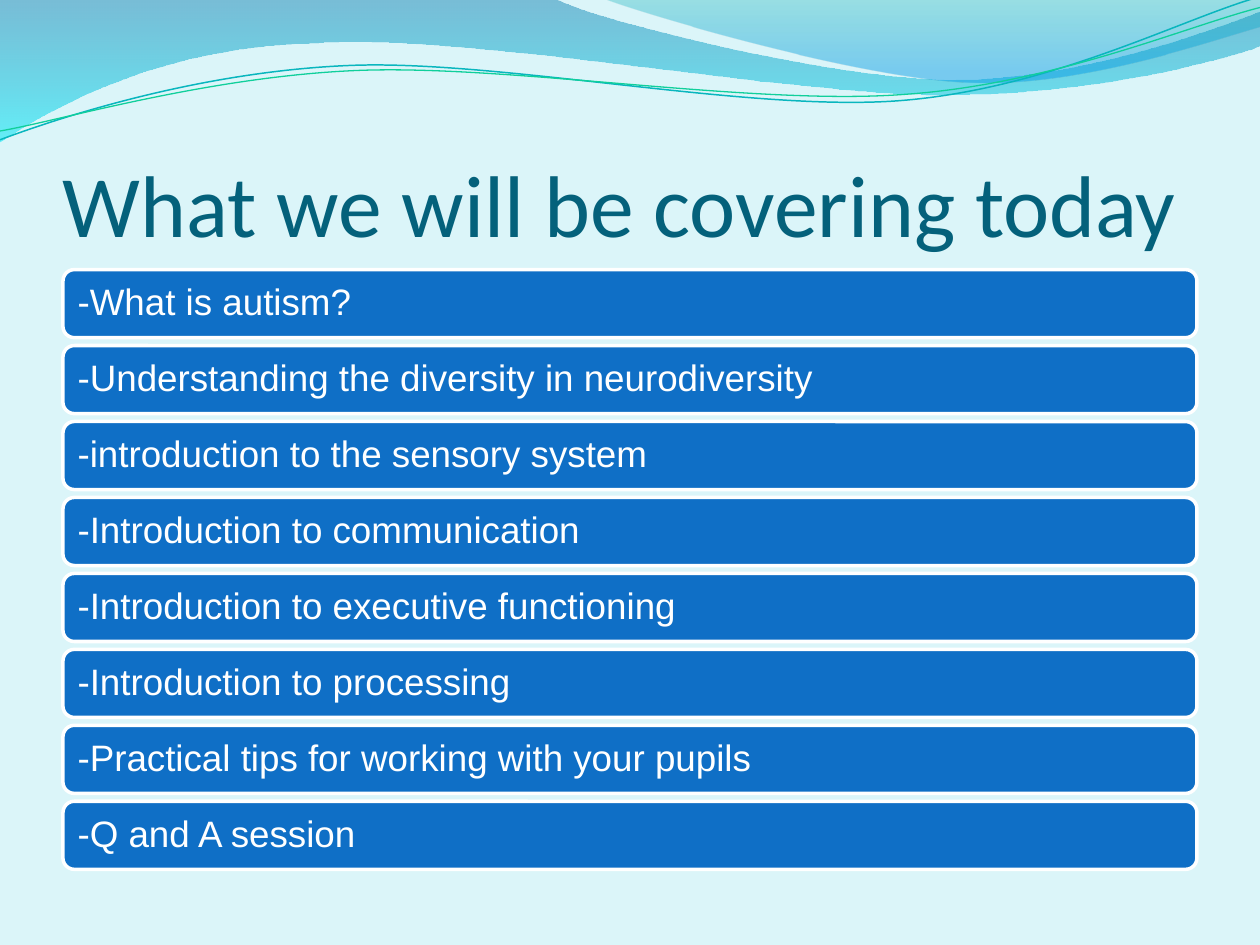
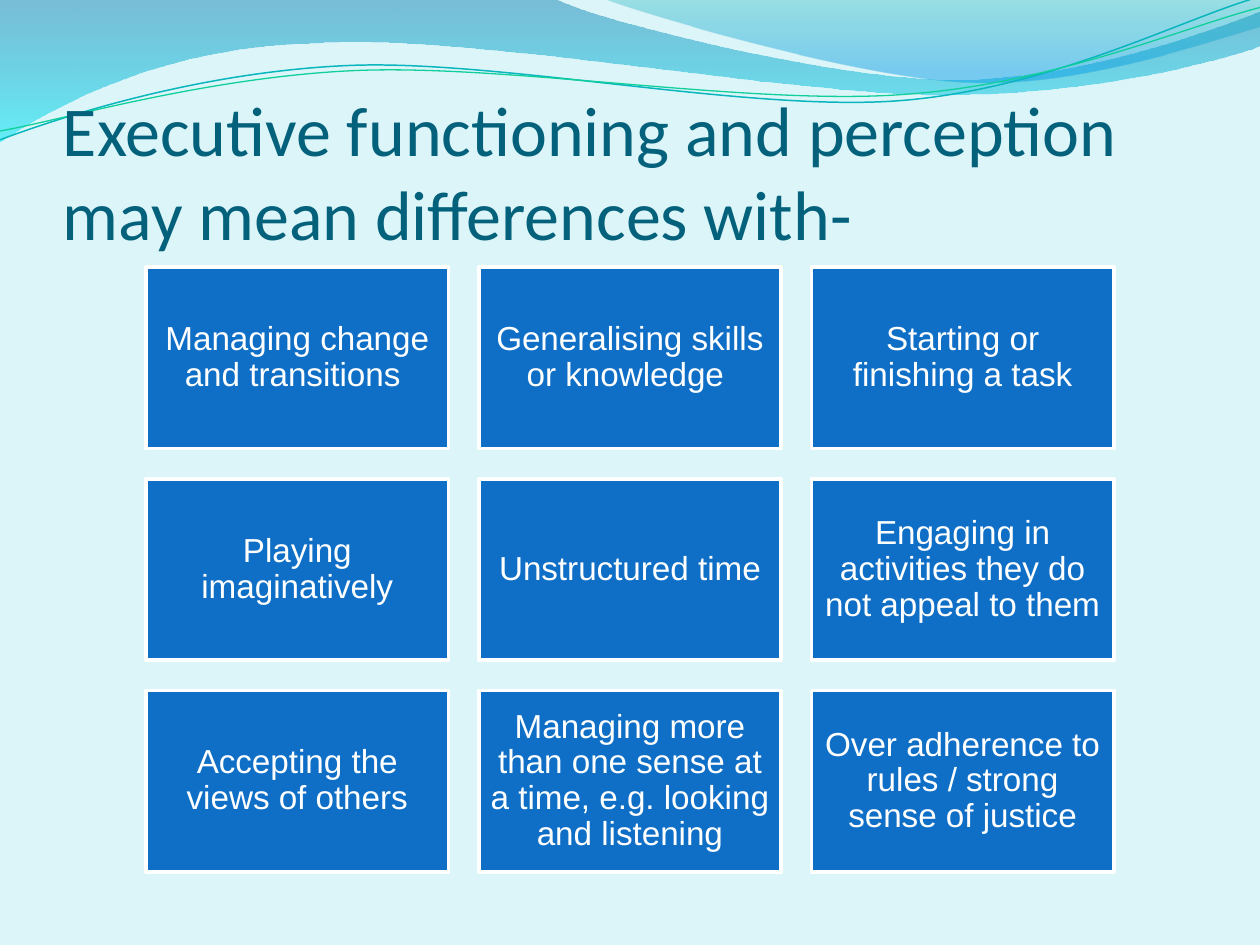
from math import cos, radians, sin

from lxml.etree import SubElement as Sub
from pptx import Presentation
from pptx.dml.color import RGBColor as RGB
from pptx.enum.shapes import MSO_SHAPE as Kind
from pptx.enum.text import MSO_ANCHOR as Anchor, PP_ALIGN as Align
from pptx.oxml.ns import qn
from pptx.util import Inches, Pt

SKY = RGB(0xDB, 0xF5, 0xF9)
INK = RGB(0x04, 0x61, 0x7B)
BLUE = RGB(0x0F, 0x6F, 0xC6)
WHITE = RGB(0xFF, 0xFF, 0xFF)
DEEP = RGB(0x00, 0x79, 0xAD)
CYAN = RGB(0x00, 0xE9, 0xF7)
TEAL = RGB(0x00, 0xAB, 0xB4)
AZURE = RGB(0x00, 0x99, 0xE4)
AQUA = RGB(0x09, 0xB6, 0xBE)
GREEN = RGB(0x10, 0xCF, 0x9B)

TILT = -2.7  # degrees, for the two thin curves

# A path is a start point, then parts: one point is a line, three a curve.
WAVE = [(0, 0), [(4.4, -0.01)],
        [(4.76, 0.17), (6.64, 0.63), (7.58, 0.63)],
        [(8.53, 0.63), (9.58, 0.26), (10, 0.09)], [(10.01, 0.36)],
        [(9.83, 0.44), (8.7, 0.76), (7.46, 0.75)],
        [(6.22, 0.75), (3.82, 0.28), (2.57, 0.34)],
        [(1.29, 0.36), (0.46, 0.83), (-0.01, 1.13)], [(0, 0)]]
CREST = [(4.79, -0.01), [(5.09, 0.11), (6.82, 0.62), (7.69, 0.65)],
         [(8.56, 0.69), (9.61, 0.32), (10, 0.21)], [(10, 0)],
         [(4.79, -0.01)]]
LOW = [(0, 1.11), [(0.48, 0.93), (1.58, 0.57), (2.77, 0.52)],
       [(3.95, 0.47), (5.93, 0.89), (7.13, 0.8)],
       [(8.33, 0.71), (9.38, 0.15), (9.98, -0.02)]]
HIGH = [(0, 1.04), [(0.47, 0.96), (1.64, 0.61), (2.83, 0.56)],
        [(4.03, 0.51), (5.97, 0.84), (7.17, 0.75)],
        [(8.36, 0.67), (9.41, 0.21), (10, 0.06)]]

TOPICS = [
    "-What is autism?",
    "-Understanding the diversity in neurodiversity",
    "-introduction to the sensory system",
    "-Introduction to communication",
    "-Introduction to executive functioning",
    "-Introduction to processing",
    "-Practical tips for working with your pupils",
    "-Q and A session",
]
# A closing space counts in the centring of its line.
TRAITS = [
    "Managing change and transitions ",
    "Generalising skills or knowledge ",
    "Starting or finishing a task",
    "Playing imaginatively",
    "Unstructured time",
    "Engaging in activities they do not appeal to them",
    "Accepting the views of others",
    "Managing more than one sense at a time, e.g. looking and listening",
    "Over adherence to rules / strong sense of justice",
]


def turn(point, angle):
    """Turn a point clockwise about the slide's top left corner."""
    x, y = point
    c, s = cos(radians(angle)), sin(radians(angle))
    return x * c - y * s, x * s + y * c


def add_path(slide, path, close, tilt=0):
    """Draw a path with true curves, in a box tilted by an angle."""
    start, *parts = path
    dots = [turn(dot, -tilt) for dot in [start, *sum(parts, [])]]
    dots = [(Inches(x), Inches(y)) for x, y in dots]
    pen = slide.shapes.build_freeform(*dots[0])
    pen.add_line_segments(dots[1:], close=close)
    shape = pen.convert_to_shape()
    shape.shadow.inherit = False

    lines = iter(list(shape._element.iter(qn("a:lnTo"))))
    for part in parts:
        group = [next(lines) for _ in part]
        if len(part) == 3:
            curve = group[0].makeelement(qn("a:cubicBezTo"))
            group[0].addprevious(curve)
            for line in group:
                curve.append(line[0])
                line.getparent().remove(line)

    half_w, half_h = shape.width / 2, shape.height / 2
    x, y = turn((shape.left + half_w, shape.top + half_h), tilt)
    shape.left, shape.top = round(x - half_w), round(y - half_h)
    shape.rotation = tilt
    return shape


def add_wave(slide, path, stops):
    """Draw a see-through wave; a stop is place, colour, opacity in percent."""
    shape = add_path(slide, path, True)
    shape.line.fill.background()
    shape.fill.gradient()
    shape.fill.gradient_angle = 270
    for stop, (place, color, _) in zip(shape.fill.gradient_stops, stops):
        stop.position = place
        stop.color.rgb = color
    for node, (_, _, alpha) in zip(shape._element.iter(qn("a:srgbClr")), stops):
        Sub(node, qn("a:alpha"), val=str(alpha * 1000))
    return shape


def add_curve(slide, path, color, width):
    shape = add_path(slide, path, False, TILT)
    shape.fill.background()
    shape.line.color.rgb = color
    shape.line.width = Pt(width)
    return shape


def dress_master(deck, slide):
    """Colour the master and move the waves, drawn on a slide, to it."""
    master = deck.slide_master
    back = master.background.fill
    back.solid()
    back.fore_color.rgb = SKY
    waves = [
        add_wave(slide, WAVE, [(0, DEEP, 45), (1, CYAN, 55)]),
        add_wave(slide, CREST, [(0, TEAL, 30), (0.8, AZURE, 45)]),
        add_curve(slide, LOW, AQUA, 0.85),
        add_curve(slide, HIGH, GREEN, 0.75),
    ]
    for number, wave in enumerate(waves, 20):
        wave._element.nvSpPr.cNvPr.set("id", str(number))
        master.shapes._spTree.append(wave._element)


def write(frame, text, size, font, color, align, anchor):
    frame.word_wrap = True
    frame.vertical_anchor = anchor
    para = frame.paragraphs[0]
    para.text = text
    para.alignment = align
    para.font.size = Pt(size)
    para.font.name = font
    para.font.color.rgb = color
    return para


def set_inset(frame, left, top, right, bottom):
    frame.margin_left, frame.margin_top = Inches(left), Inches(top)
    frame.margin_right, frame.margin_bottom = Inches(right), Inches(bottom)


def add_slide(deck):
    return deck.slides.add_slide(deck.slide_layouts[6])


def add_title(slide, text, size):
    box = slide.shapes.add_textbox(
        Inches(0.5), Inches(0.77), Inches(9), Inches(1.25))
    set_inset(box.text_frame, 0, 0.05, 0, 0)
    write(box.text_frame, text, size, "Calibri", INK, Align.LEFT,
          Anchor.BOTTOM)


def add_card(slide, kind, spot, text, size, align, inset):
    shape = slide.shapes.add_shape(kind, *map(Inches, spot))
    shape.shadow.inherit = False
    shape.fill.solid()
    shape.fill.fore_color.rgb = BLUE
    shape.line.color.rgb = WHITE
    shape.line.width = Pt(2)
    set_inset(shape.text_frame, *[inset] * 4)
    para = write(shape.text_frame, text, size, "Arial", WHITE, align,
                 Anchor.MIDDLE)
    para.line_spacing = 0.9


def add_list(slide, items):
    first, last = 2.14, 6.36
    step = (last - first) / (len(items) - 1)
    for n, text in enumerate(items):
        add_card(slide, Kind.ROUNDED_RECTANGLE,
                 (0.5, first + n * step, 9, 0.54), text, 21, Align.LEFT, 0.09)


def add_grid(slide, items):
    wide, high, gap = 2.4, 1.44, 0.24
    for n, text in enumerate(items):
        row, col = divmod(n, 3)
        spot = (1.16 + col * (wide + gap), 2.12 + row * (high + gap),
                wide, high)
        add_card(slide, Kind.RECTANGLE, spot, text, 19, Align.CENTER, 0.08)


def main():
    deck = Presentation()
    deck.slide_width, deck.slide_height = Inches(10), Inches(7.5)

    agenda = add_slide(deck)
    dress_master(deck, agenda)
    add_title(agenda, "What we will be covering today", 50)
    add_list(agenda, TOPICS)

    effects = add_slide(deck)
    add_title(effects, "Executive functioning and perception "
              "may mean differences with-", 40)
    add_grid(effects, TRAITS)

    deck.save("out.pptx")


if __name__ == "__main__":
    main()
